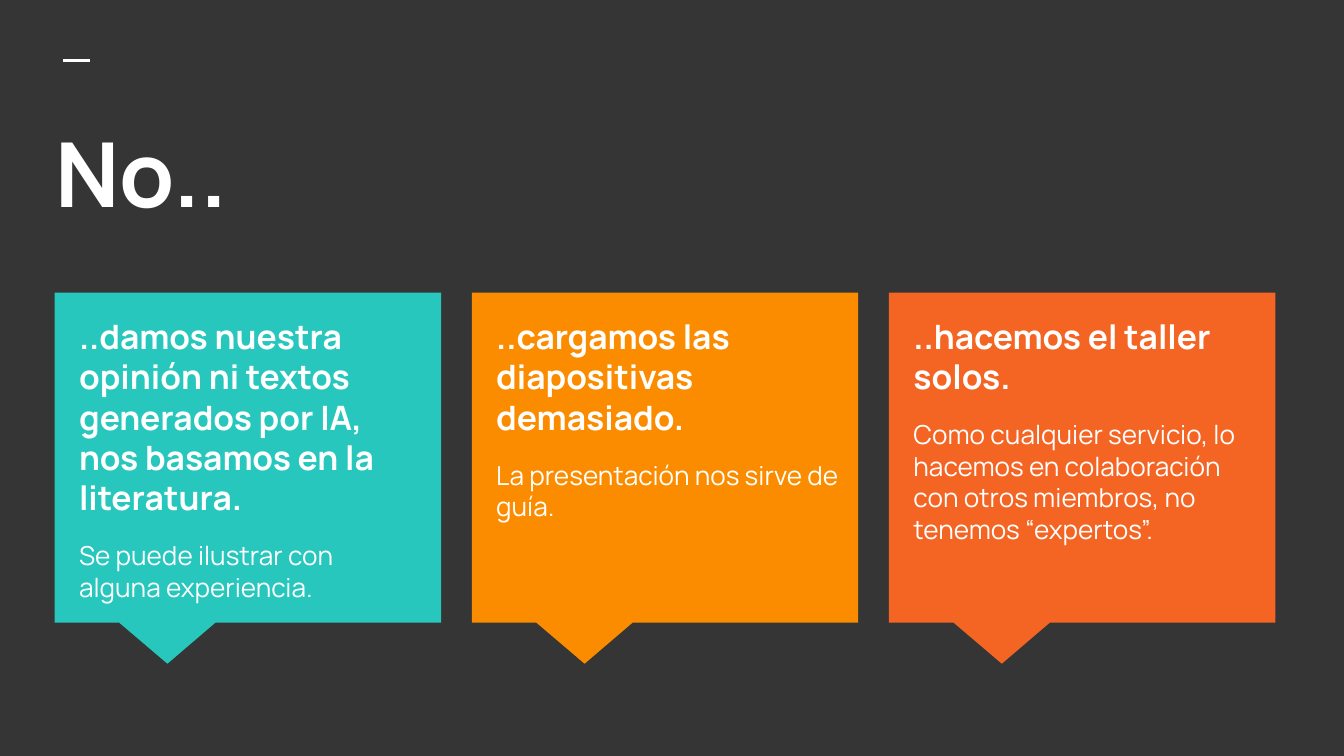
from lxml import etree
from pptx import Presentation
from pptx.dml.color import RGBColor
from pptx.enum.shapes import MSO_CONNECTOR, MSO_SHAPE
from pptx.enum.text import MSO_ANCHOR, MSO_AUTO_SIZE, PP_ALIGN
from pptx.oxml.ns import qn
from pptx.util import Pt

CALLOUT = MSO_SHAPE.RECTANGULAR_CALLOUT
STRAIGHT = MSO_CONNECTOR.STRAIGHT
TOP = MSO_ANCHOR.TOP
LEFT = PP_ALIGN.LEFT
NO_FIT = MSO_AUTO_SIZE.NONE

FONT = "Manrope"
WHITE = "FFFFFF"
BACKGROUND = "353535"
TITLE = "No.."
CARDS = [
    ("27C7BD", 195,
     "..damos nuestra opinión ni textos generados por IA, nos basamos en la literatura.",
     "Se puede ilustrar con alguna experiencia."),
    ("FB8C00", 201,
     "..cargamos las diapositivas demasiado.",
     "La presentación nos sirve de guía."),
    ("F46524", 195,
     "..hacemos el taller solos.",
     "Como cualquier servicio, lo hacemos en colaboración con otros miembros, no tenemos “expertos”."),
]
CARD_LEFT, CARD_TOP, CARD_WIDTH, CARD_HEIGHT = 29.25, 156.75, 207, 176.75
CARD_STEP = 223.5
TEXT_INDENT, TEXT_TOP, TEXT_HEIGHT = 6, 162, 158
POINTER = (-0.208, 0.625)
INSET = 7.2


def color(hex_code):
    return RGBColor.from_string(hex_code)


def prepare(frame):
    frame.word_wrap = True
    frame.auto_size = NO_FIT
    frame.vertical_anchor = TOP
    frame.margin_left = frame.margin_right = Pt(INSET)
    frame.margin_top = frame.margin_bottom = Pt(INSET)


def write(paragraph, words, size, bold):
    paragraph.alignment = LEFT
    run = paragraph.add_run()
    run.text = words
    run.font.name = FONT
    run.font.size = Pt(size)
    run.font.bold = bold
    run.font.color.rgb = color(WHITE)


def add_accent(slide):
    accent = slide.shapes.add_connector(STRAIGHT, Pt(33.75), Pt(32.5), Pt(48.25), Pt(32.5))
    accent.line.color.rgb = color(WHITE)
    accent.line.width = Pt(1.5)
    etree.SubElement(accent._element.spPr, qn("a:effectLst"))


def add_title(slide):
    title = slide.shapes.title
    title.left, title.top, title.width, title.height = Pt(22.5), Pt(56), Pt(679), Pt(80.5)
    prepare(title.text_frame)
    write(title.text_frame.paragraphs[0], TITLE, 48, True)


def add_card(slide, index, fill, text_width, heading, detail):
    left = CARD_LEFT + index * CARD_STEP
    card = slide.shapes.add_shape(CALLOUT, Pt(left), Pt(CARD_TOP), Pt(CARD_WIDTH), Pt(CARD_HEIGHT))
    card.adjustments[0], card.adjustments[1] = POINTER
    card.shadow.inherit = False
    card.fill.solid()
    card.fill.fore_color.rgb = color(fill)
    card.line.fill.background()

    message = slide.shapes.add_textbox(
        Pt(left + TEXT_INDENT), Pt(TEXT_TOP), Pt(text_width), Pt(TEXT_HEIGHT)).text_frame
    prepare(message)
    write(message.paragraphs[0], heading, 18, True)
    explanation = message.add_paragraph()
    explanation.space_before = explanation.space_after = Pt(12)
    write(explanation, detail, 14, False)


def main():
    """Build the slide with three callouts on what the workshop avoids."""
    deck = Presentation()
    deck.slide_width, deck.slide_height = Pt(720), Pt(405)
    slide = deck.slides.add_slide(deck.slide_layouts[5])
    slide.background.fill.solid()
    slide.background.fill.fore_color.rgb = color(BACKGROUND)
    add_accent(slide)
    add_title(slide)
    for index, card in enumerate(CARDS):
        add_card(slide, index, *card)
    deck.save("out.pptx")


if __name__ == "__main__":
    main()
